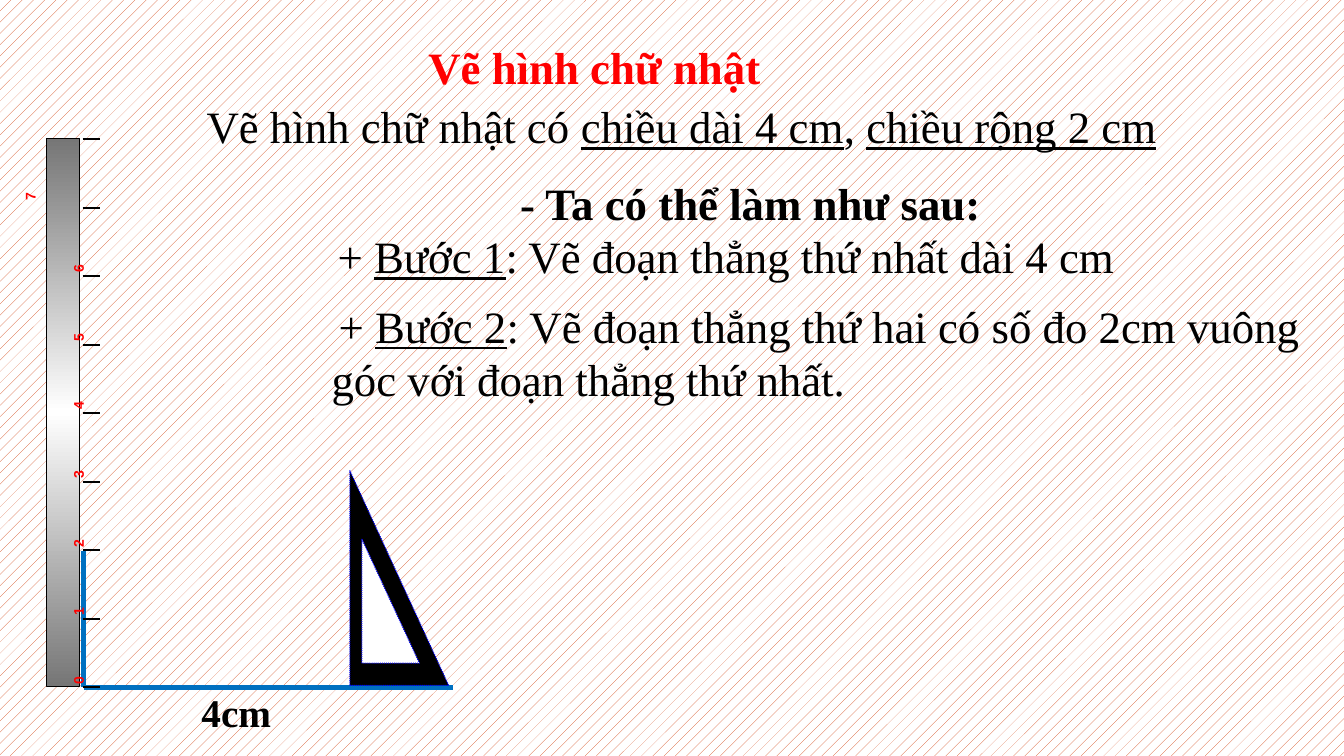
import dataclasses

import lxml.etree
import pptx
import pptx.dml.color
import pptx.enum.dml
import pptx.enum.shapes
import pptx.enum.text
import pptx.oxml
import pptx.oxml.ns
import pptx.util

Inches = pptx.util.Inches
Pt = pptx.util.Pt
Shape = pptx.enum.shapes.MSO_SHAPE


@dataclasses.dataclass(frozen=True)
class Theme:
    serif: str = "Times New Roman"
    sans: str = "Arial"
    red: str = "FF0000"
    black: str = "000000"
    white: str = "FFFFFF"
    segment: str = "0070C0"
    square_edge: str = "0000FF"
    hatch: str = "D34817"
    ruler_dark: str = "767676"
    body_size: int = 32
    measure_size: int = 28
    digit_size: int = 10
    gap_size: int = 18


THEME = Theme()


@dataclasses.dataclass(frozen=True)
class Style:
    size: int = THEME.body_size
    font: str = THEME.serif
    color: str = THEME.black
    bold: bool = False
    underline: bool = False


BODY = Style()
BOLD = Style(bold=True)
TITLE = Style(color=THEME.red, bold=True)
UNDERLINED = Style(underline=True)
MEASURE = Style(size=THEME.measure_size, bold=True)
DIGIT = Style(size=THEME.digit_size, font=THEME.sans, color=THEME.red, bold=True)
GAP = Style(size=THEME.gap_size, font=THEME.sans, color=THEME.red, bold=True)


def rgb(value):
    return pptx.dml.color.RGBColor.from_string(value)


def add_text(shapes, box, runs, wrap=False, rotation=0):
    """Add one paragraph made of (text, style) runs."""
    text_box = shapes.add_textbox(*map(Inches, box))
    text_box.rotation = rotation
    frame = text_box.text_frame
    frame.word_wrap = wrap
    frame.auto_size = pptx.enum.text.MSO_AUTO_SIZE.SHAPE_TO_FIT_TEXT
    for text, style in runs:
        run = frame.paragraphs[0].add_run()
        run.text = text
        run.font.size = Pt(style.size)
        run.font.name = style.font
        run.font.bold = style.bold
        run.font.underline = style.underline
        run.font.color.rgb = rgb(style.color)


def add_line(shapes, start, end, color, width):
    line = shapes.add_connector(
        pptx.enum.shapes.MSO_CONNECTOR.STRAIGHT, *map(Inches, (*start, *end)))
    line.line.color.rgb = rgb(color)
    line.line.width = Pt(width)
    properties = line._element.spPr
    lxml.etree.SubElement(properties, pptx.oxml.ns.qn("a:effectLst"))


def add_outlined(shapes, kind, box, edge):
    shape = shapes.add_shape(kind, *map(Inches, box))
    shape.shadow.inherit = False
    shape.line.color.rgb = rgb(edge)
    shape.line.width = Pt(0.75)
    return shape


def set_background(slide):
    fill = slide.background.fill
    fill.patterned()
    fill.pattern = pptx.enum.dml.MSO_PATTERN.PERCENT_10
    fill.fore_color.rgb = rgb(THEME.hatch)
    fill.back_color.rgb = rgb(THEME.white)


def add_lesson(shapes):
    add_text(shapes, (4.15, 0.34, 3.52, 0.64), [("Vẽ hình chữ nhật", TITLE)])
    add_text(shapes, (1.95, 0.93, 9.71, 0.64), [
        ("Vẽ hình chữ nhật có ", BODY), ("chiều dài 4 cm", UNDERLINED),
        (", ", BODY), ("chiều rộng 2 cm", UNDERLINED)])
    add_text(shapes, (5.06, 1.69, 4.81, 0.64),
             [("- Ta có thể làm như sau:", BOLD)])
    add_text(shapes, (3.25, 2.22, 7.97, 0.64), [
        ("+ ", BODY), ("Bước 1", UNDERLINED),
        (": Vẽ đoạn thẳng thứ nhất dài 4 cm", BODY)], wrap=True)
    add_text(shapes, (3.19, 2.91, 10.03, 1.18), [
        (" ", GAP), ("+ ", BODY), ("Bước 2", UNDERLINED),
        (": Vẽ đoạn thẳng thứ hai có số đo 2cm vuông góc với đoạn thẳng"
         " thứ nhất.", BODY)], wrap=True)


def add_segments(shapes, left, top, width, height):
    """Draw the rectangle's base and left side, with the base's length."""
    corner = (left, top + height)
    add_line(shapes, corner, (left + width, top + height), THEME.segment, 4)
    add_line(shapes, (left, top), corner, THEME.segment, 4)
    add_text(shapes, (left + 1.07, top + height - 0.04, 0.9, 0.57),
             [("4cm", MEASURE)])


def add_set_square(shapes, left, top, width, height):
    group = shapes.add_group_shape().shapes
    outer = (left, top, width, height)
    inner = (left + 0.12, top + 0.68, 0.57, 1.23)
    for box, color in ((outer, THEME.black), (inner, THEME.white)):
        triangle = add_outlined(group, Shape.RIGHT_TRIANGLE, box, THEME.square_edge)
        triangle.fill.solid()
        triangle.fill.fore_color.rgb = rgb(color)
        triangle.line.dash_style = pptx.enum.dml.MSO_LINE.ROUND_DOT


def fill_ruler(shape):
    """Shade from dark at both ends to white in the middle."""
    shape.fill.gradient()
    shape.fill.gradient_angle = 90
    stops = shape._element.spPr.find(".//" + pptx.oxml.ns.qn("a:gsLst"))
    for stop in list(stops):
        stops.remove(stop)
    shades = (THEME.ruler_dark, THEME.white, THEME.ruler_dark)
    for index, color in enumerate(shades):
        stop = lxml.etree.SubElement(
            stops, pptx.oxml.ns.qn("a:gs"), pos=str(index * 50000))
        lxml.etree.SubElement(stop, pptx.oxml.ns.qn("a:srgbClr"), val=color)


def add_ruler(shapes, left, top, width, height):
    group = shapes.add_group_shape().shapes
    fill_ruler(add_outlined(group, Shape.RECTANGLE,
                            (left, top, width, height), THEME.black))
    intervals = 8
    step = height / intervals
    tick_left = left + width + 0.03
    for number in range(intervals + 1):
        tick_y = top + height + 0.01 - number * step
        add_line(group, (tick_left, tick_y), (tick_left + 0.17, tick_y),
                 THEME.black, 1.5)
    for number in range(intervals):
        digit_left, digit_top = tick_left - 0.18, top + height - 0.2 - number * step
        if number == intervals - 1:
            digit_left, digit_top = left - 0.3, top + 0.44
        add_text(group, (digit_left, digit_top, 0.28, 0.27),
                 [(str(number), DIGIT)], rotation=270)


def main():
    presentation = pptx.Presentation()
    presentation.slide_width = Inches(13.33)
    presentation.slide_height = Inches(7.5)
    slide = presentation.slides.add_slide(presentation.slide_layouts[6])
    set_background(slide)
    add_lesson(slide.shapes)
    add_segments(slide.shapes, 0.83, 5.47, 3.66, 1.35)
    add_set_square(slide.shapes, 3.47, 4.67, 0.98, 2.13)
    add_ruler(slide.shapes, 0.46, 1.37, 0.33, 5.44)
    presentation.save("out.pptx")


if __name__ == "__main__":
    main()
